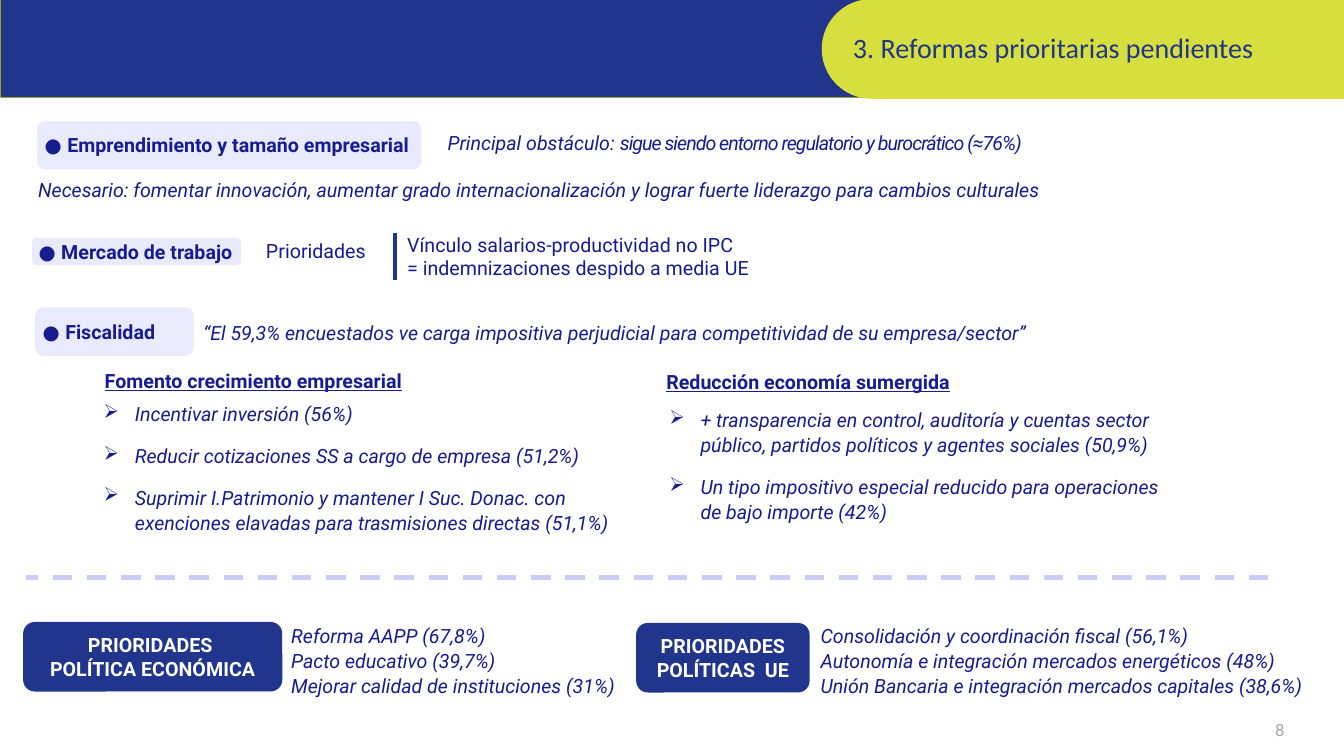
from lxml.etree import SubElement
from pptx import Presentation
from pptx.dml.color import RGBColor
from pptx.enum.dml import MSO_LINE as Dash
from pptx.enum.shapes import MSO_CONNECTOR as Link, MSO_SHAPE as Shape
from pptx.enum.text import MSO_ANCHOR as Anchor, MSO_AUTO_SIZE as Fit, PP_ALIGN as Align
from pptx.oxml.ns import qn
from pptx.util import Inches, Pt

WIDE, HIGH = Inches(13.33), Inches(7.5)
COLS, ROWS = 133.3, 75
HUES = {"navy": "20358B", "ink": "171C8F", "lime": "D6DF3D", "olive": "9EA52D",
        "pale": "E9EAFB", "lilac": "CACCF6", "gray": "A6A6A6", "white": "FFFFFF"}
BASE = {"name": "Roboto", "size": Pt(14), "color": "ink"}
SLANT = {"italic": True}
BOLD = {"bold": True}
HEAD = {"bold": True, "underline": True}
LOOSE = {"line_spacing": 1.07}
LIST = {"line_spacing": 1.07, "space_after": Pt(12)}
MID = {"alignment": Align.CENTER}


def hue(name):
    return RGBColor.from_string(HUES[name])


class Page:
    """One slide, addressed in grid columns and rows as (left, top, width, height)."""

    def __init__(self, deck):
        self.slide = deck.slides.add_slide(deck.slide_layouts[5])
        self.shapes = self.slide.shapes

    def place(self, at):
        x, y, w, h = at
        return [int(n) for n in (x * WIDE / COLS, y * HIGH / ROWS,
                                 w * WIDE / COLS, h * HIGH / ROWS)]

    def fill_in(self, frame, lines, font=None, para=None, bullet=None):
        """Fill a frame; a line is a string or a list of (text, font) runs."""
        for i, line in enumerate(lines):
            p = frame.paragraphs[0] if i == 0 else frame.add_paragraph()
            for key, val in {"alignment": Align.LEFT, **(para or {})}.items():
                setattr(p, key, val)
            if bullet:
                props = p._p.get_or_add_pPr()
                props.set("marL", str(Inches(0.31)))
                props.set("indent", str(-Inches(0.31)))
                SubElement(props, qn("a:buChar")).set("char", bullet)
            for words, extra in [(line, {})] if isinstance(line, str) else line:
                run = p.add_run()
                run.text = words
                style = {**BASE, **(font or {}), **extra}
                run.font.color.rgb = hue(style.pop("color"))
                track = style.pop("track", None)
                for key, val in style.items():
                    setattr(run.font, key, val)
                if track:
                    run._r.get_or_add_rPr().set("spc", str(track))

    def text(self, at, *lines, **style):
        frame = self.shapes.add_textbox(*self.place(at)).text_frame
        frame.word_wrap = True
        frame.auto_size = Fit.SHAPE_TO_FIT_TEXT
        self.fill_in(frame, lines, **style)

    def title(self, at, words, font):
        title = self.shapes.title
        title.left, title.top, title.width, title.height = self.place(at)
        frame = title.text_frame
        frame.word_wrap, frame.auto_size = True, Fit.NONE
        frame.vertical_anchor = Anchor.TOP
        self.fill_in(frame, [words], font)
        self.shapes._spTree.append(title._element)  # bring above the header band

    def block(self, kind, at, fill, edge=None):
        shape = self.shapes.add_shape(kind, *self.place(at))
        shape.shadow.inherit = False
        shape.fill.solid()
        shape.fill.fore_color.rgb = hue(fill)
        if edge:
            shape.line.color.rgb, shape.line.width = hue(edge), Pt(1)
        else:
            shape.line.fill.background()
        return shape

    def label(self, at, fill, *lines, pad=0.0, **style):
        frame = self.block(Shape.ROUNDED_RECTANGLE, at, fill).text_frame
        frame.word_wrap, frame.vertical_anchor = False, Anchor.MIDDLE
        frame.margin_top = frame.margin_bottom = frame.margin_right = 0
        frame.margin_left = Inches(pad)
        self.fill_in(frame, lines, **style)

    def topic(self, at, words):
        self.label(at, "pale", [("● ", {"name": "Quicksand"}), (words, {})],
                   pad=0.05, font=BOLD)

    def badge(self, at, *lines):
        self.label(at, "navy", *lines, font={"bold": True, "color": "white"}, para=MID)

    def rule(self, start, end, color, width, dash=None):
        ends = self.place((*start, *end))
        line = self.shapes.add_connector(Link.STRAIGHT, *ends)
        line.line.color.rgb, line.line.width = hue(color), Pt(width)
        if dash:
            line.line.dash_style = dash
        SubElement(line._element.spPr, qn("a:effectLst"))


def main():
    deck = Presentation()
    deck.slide_width, deck.slide_height = WIDE, HIGH
    page = Page(deck)

    page.block(Shape.RECTANGLE, (0, -0.1, 90.8, 9.8), "navy", "olive")
    tab = page.block(Shape.ROUND_2_SAME_RECTANGLE, (102.45, -21.05, 9.9, 51.8), "lime")
    tab.rotation = 270
    tab.adjustments[0], tab.adjustments[1] = 0.5, 0
    page.title((83.6, 2.5, 49.7, 4.4), "3. Reformas prioritarias pendientes",
               {"name": "Calibri", "size": Pt(20), "color": "navy"})

    page.topic((3.7, 12, 38.1, 4.8), "Emprendimiento y tamaño empresarial")
    page.text((43.4, 12.5, 60.1, 3.4),
              [("Principal obstáculo: ", {}),
               ("sigue siendo entorno regulatorio y burocrático (≈76%)", {"track": -70})],
              font=SLANT)
    page.text((2.8, 17.2, 110.8, 3.4),
              "Necesario: fomentar innovación, aumentar grado internacionalización "
              "y lograr fuerte liderazgo para cambios culturales", font=SLANT)

    page.topic((3.2, 23.6, 20.7, 2.7), "Mercado de trabajo")
    page.text((25.4, 23.2, 13, 3.4), "Prioridades")
    page.rule((39.2, 23.1), (39.2, 27.8), "navy", 2.5)
    page.text((39.4, 22.6, 43, 5.7), "Vínculo salarios-productividad no IPC",
              "= indemnizaciones despido a media UE")

    page.topic((3.5, 30.5, 15.7, 4.8), "Fiscalidad")
    page.text((19.2, 31.3, 100.7, 3.4),
              "“El 59,3% encuestados ve carga impositiva perjudicial para "
              "competitividad de su empresa/sector”", font=SLANT)

    page.text((9.4, 36.1, 51.1, 3.4), "Fomento crecimiento empresarial", font=HEAD)
    page.text((9.3, 39.2, 52.8, 14.3), "Incentivar inversión (56%)",
              "Reducir cotizaciones SS a cargo de empresa (51,2%)",
              "Suprimir I.Patrimonio y mantener I Suc. Donac. con exenciones "
              "elavadas para trasmisiones directas (51,1%)",
              font=SLANT, para=LIST, bullet="➢")
    page.text((65.1, 36.2, 36.9, 3.4), "Reducción economía sumergida", font=HEAD)
    page.text((65.4, 39.8, 52.8, 12.6),
              "+ transparencia en control, auditoría y cuentas sector público, "
              "partidos políticos y agentes sociales (50,9%)",
              "Un tipo impositivo especial reducido para operaciones de bajo "
              "importe (42%)", font=SLANT, para=LIST, bullet="➢")

    page.rule((125.8, 57.3), (2.6, 57.3), "lilac", 3.5, Dash.DASH)

    page.badge((2.3, 61.7, 25.7, 6.9), "PRIORIDADES ", "POLÍTICA ECONÓMICA")
    page.text((27.9, 61.2, 35, 8.4), "Reforma AAPP (67,8%)", "Pacto educativo (39,7%)",
              "Mejorar calidad de instituciones (31%)", font=SLANT, para=LOOSE)
    page.badge((63.1, 61.8, 17.2, 6.9), "PRIORIDADES", "POLÍTICAS  UE")
    page.text((80.4, 61.2, 52.9, 8.4), "Consolidación y coordinación fiscal (56,1%)",
              "Autonomía e integración mercados energéticos (48%)",
              "Unión Bancaria e integración mercados capitales (38,6%)",
              font=SLANT, para=LOOSE)

    page.text((125.5, 70.9, 2.7, 3), "8", font={"size": Pt(12), "color": "gray"})
    deck.save("out.pptx")


if __name__ == "__main__":
    main()
